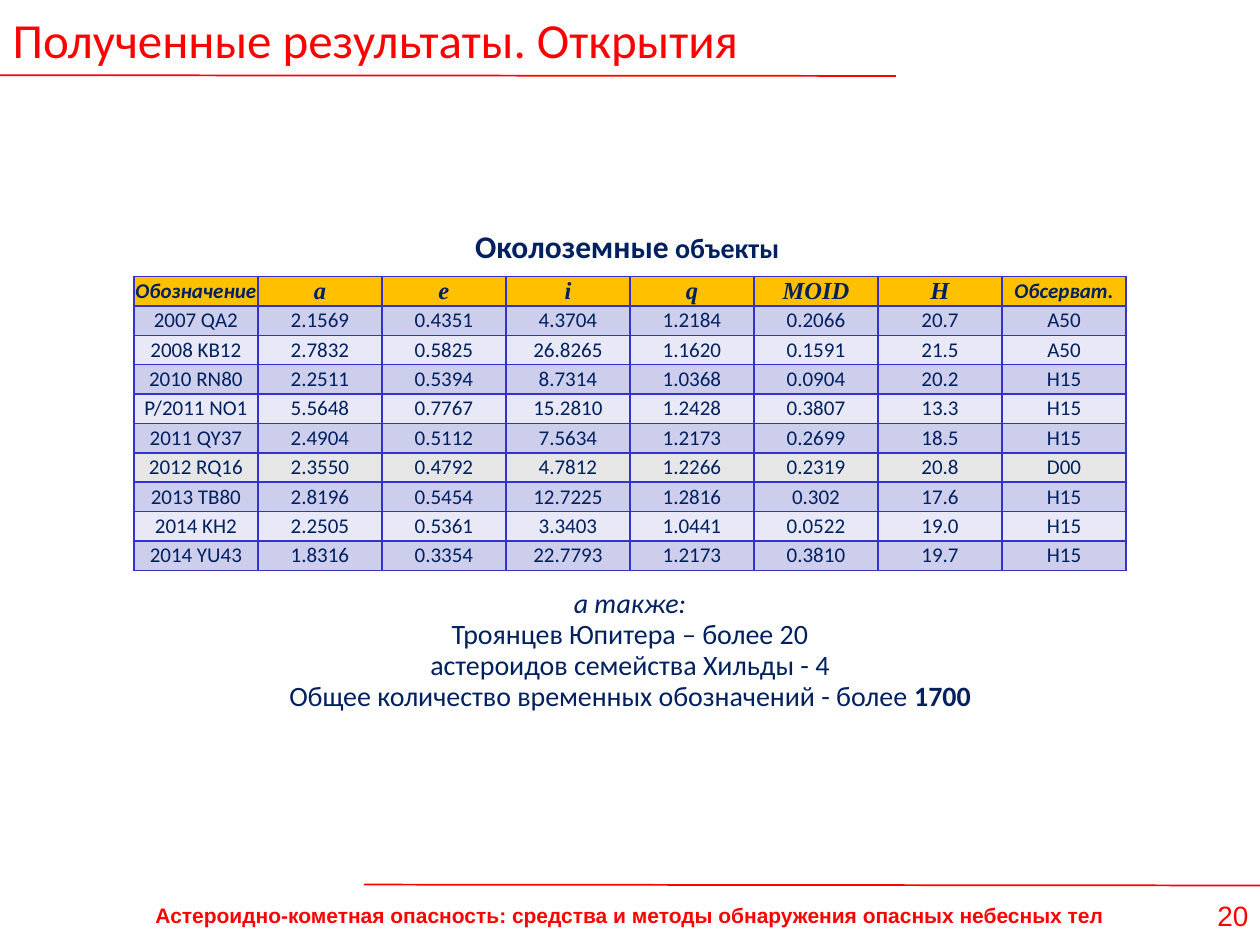
from pptx import Presentation
from pptx.dml.color import RGBColor
from pptx.enum import shapes, text
from pptx.oxml import parse_xml
from pptx.oxml.ns import nsdecls
from pptx.util import Pt

RED = RGBColor(0xFF, 0x00, 0x00)
NAVY = RGBColor(0x00, 0x20, 0x60)
BLUE = RGBColor(0x33, 0x33, 0xCC)
GOLD = RGBColor(0xFF, 0xC0, 0x00)
DARK = RGBColor(0xCD, 0xCD, 0xEC)
PALE = RGBColor(0xE8, 0xE8, 0xF6)
GRAY = RGBColor(0xE6, 0xE6, 0xE6)
MID = text.PP_ALIGN.CENTER


def style(run, size, color, name="Calibri", bold=False, slant=False):
    font = run.font
    font.size, font.name = Pt(size), name
    font.bold, font.italic = bold, slant
    font.color.rgb = color


def add_box(x, y, w, h, wrap=True):
    frame = slide.shapes.add_textbox(Pt(x), Pt(y), Pt(w), Pt(h)).text_frame
    frame.word_wrap = wrap
    frame.paragraphs[0].alignment = MID
    return frame


deck = Presentation()
deck.slide_width, deck.slide_height = Pt(720), Pt(540)
slide = deck.slides.add_slide(deck.slide_layouts[5])

# Title; the larger closing space sets the line height
title = slide.shapes.title
title.left, title.top, title.width, title.height = Pt(0), Pt(0), Pt(720), Pt(38)
frame = title.text_frame
frame.auto_size = text.MSO_AUTO_SIZE.NONE
frame.vertical_anchor = text.MSO_ANCHOR.MIDDLE
par = frame.paragraphs[0]
par.alignment = text.PP_ALIGN.LEFT
for words, size in [("Полученные результаты. Открытия", 28), (" ", 36)]:
    run = par.add_run()
    run.text = words
    style(run, size, RED)

# Rules under the title and above the footer
for x1, y1, x2, y2 in [(0, 43, 512, 43.4), (208, 505.5, 720, 506)]:
    rule = slide.shapes.add_connector(
        shapes.MSO_CONNECTOR.STRAIGHT, Pt(x1), Pt(y1), Pt(x2), Pt(y2))
    rule.line.color.rgb = RED
    rule.line.width = Pt(1)
    rule._element.spPr.append(parse_xml(f"<a:effectLst {nsdecls('a')}/>"))

# Table heading
par = add_box(244, 128, 232.5, 27.5).paragraphs[0]
par.line_spacing = 0.93
for words, size in [("Околоземные", 18), (" объекты ", 16)]:
    run = par.add_run()
    run.text = words
    style(run, size, NAVY, bold=True)

# Table of near-Earth objects
rows = [
    ["Обозначение", "a", "e", "i", "q", "MOID", "H", "Обсерват."],
    ["2007 QA2", "2.1569", "0.4351", "4.3704", "1.2184", "0.2066", "20.7", "A50"],
    ["2008 KB12", "2.7832", "0.5825", "26.8265", "1.1620", "0.1591", "21.5", "A50"],
    ["2010 RN80", "2.2511", "0.5394", "8.7314", "1.0368", "0.0904", "20.2", "H15"],
    ["P/2011 NO1", "5.5648", "0.7767", "15.2810", "1.2428", "0.3807", "13.3", "H15"],
    ["2011 QY37", "2.4904", "0.5112", "7.5634", "1.2173", "0.2699", "18.5", "H15"],
    ["2012 RQ16", "2.3550", "0.4792", "4.7812", "1.2266", "0.2319", "20.8", "D00"],
    ["2013 TB80", "2.8196", "0.5454", "12.7225", "1.2816", "0.302", "17.6", "H15"],
    ["2014 KH2", "2.2505", "0.5361", "3.3403", "1.0441", "0.0522", "19.0", "H15"],
    ["2014 YU43", "1.8316", "0.3354", "22.7793", "1.2173", "0.3810", "19.7", "H15"],
]
wide, high = 70.87, 16.8
count = len(rows[0])
table = slide.shapes.add_table(
    len(rows), count, Pt(76.5), Pt(158), Pt(wide * count), Pt(high * len(rows))).table
for col in table.columns:
    col.width = Pt(wide)
for r, row in enumerate(rows):
    table.rows[r].height = Pt(high)
    head = r == 0
    fill = GOLD if head else DARK if r % 2 else PALE
    if row[0] == "2012 RQ16":
        fill = GRAY
    for c, words in enumerate(row):
        cell = table.cell(r, c)
        cell.margin_left = cell.margin_right = cell.margin_top = cell.margin_bottom = 0
        cell.vertical_anchor = text.MSO_ANCHOR.MIDDLE
        par = cell.text_frame.paragraphs[0]
        par.text = words
        par.alignment = MID
        if head and 0 < c < count - 1:
            style(par.runs[0], 14, NAVY, "Times New Roman", True, True)
        else:
            style(par.runs[0], 12, NAVY, bold=head, slant=head)
        # Borders come before the fill in the cell properties
        props = cell._tc.get_or_add_tcPr()
        for side in ("lnL", "lnR", "lnT", "lnB"):
            props.append(parse_xml(
                f'<a:{side} {nsdecls("a")} w="{Pt(1)}"><a:solidFill>'
                f'<a:srgbClr val="{BLUE}"/></a:solidFill></a:{side}>'))
        cell.fill.solid()
        cell.fill.fore_color.rgb = fill

# Summary below the table
frame = add_box(155.5, 332.6, 409, 79, wrap=False)
frame.text = "\n".join([
    "а также:",
    "Троянцев Юпитера – более 20",
    "астероидов семейства Хильды - 4",
    "Общее количество временных обозначений - более ",
])
for n, par in enumerate(frame.paragraphs):
    par.alignment = MID
    par.line_spacing = 0.93
    style(par.runs[0], 16, NAVY, slant=n == 0)
total = par.add_run()
total.text = "1700"
style(total, 16, NAVY, bold=True)

# Footer and page number
for words, x, y, w, h, size, bold in [
    ("Астероидно-кометная опасность: средства и методы обнаружения опасных небесных тел",
     0, 512, 720, 22, 12, True),
    ("20", 684.7, 509.8, 39.6, 26.6, 16, False),
]:
    par = add_box(x, y, w, h).paragraphs[0]
    par.text = words
    style(par.runs[0], size, RED, "Arial", bold)

deck.save("out.pptx")
